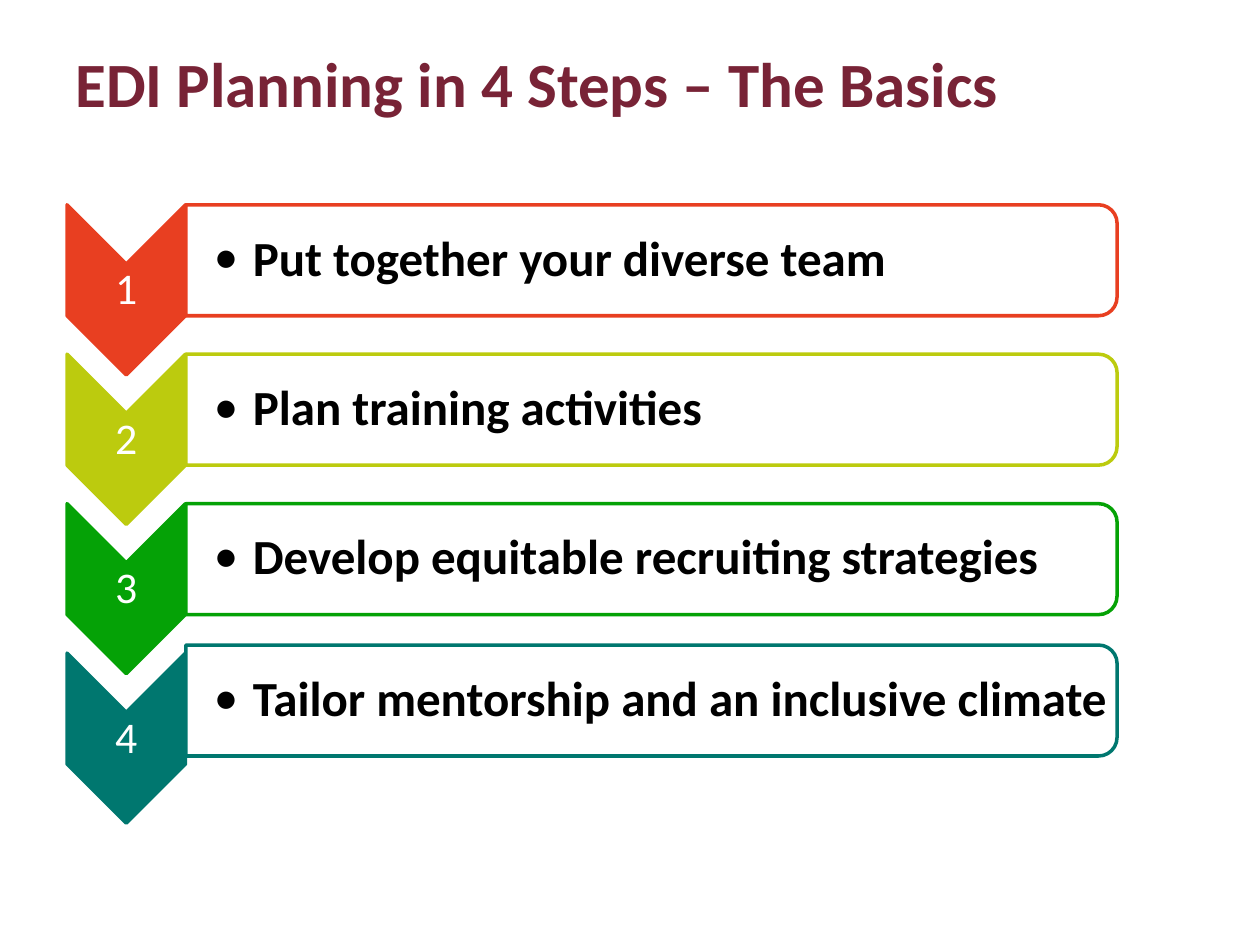
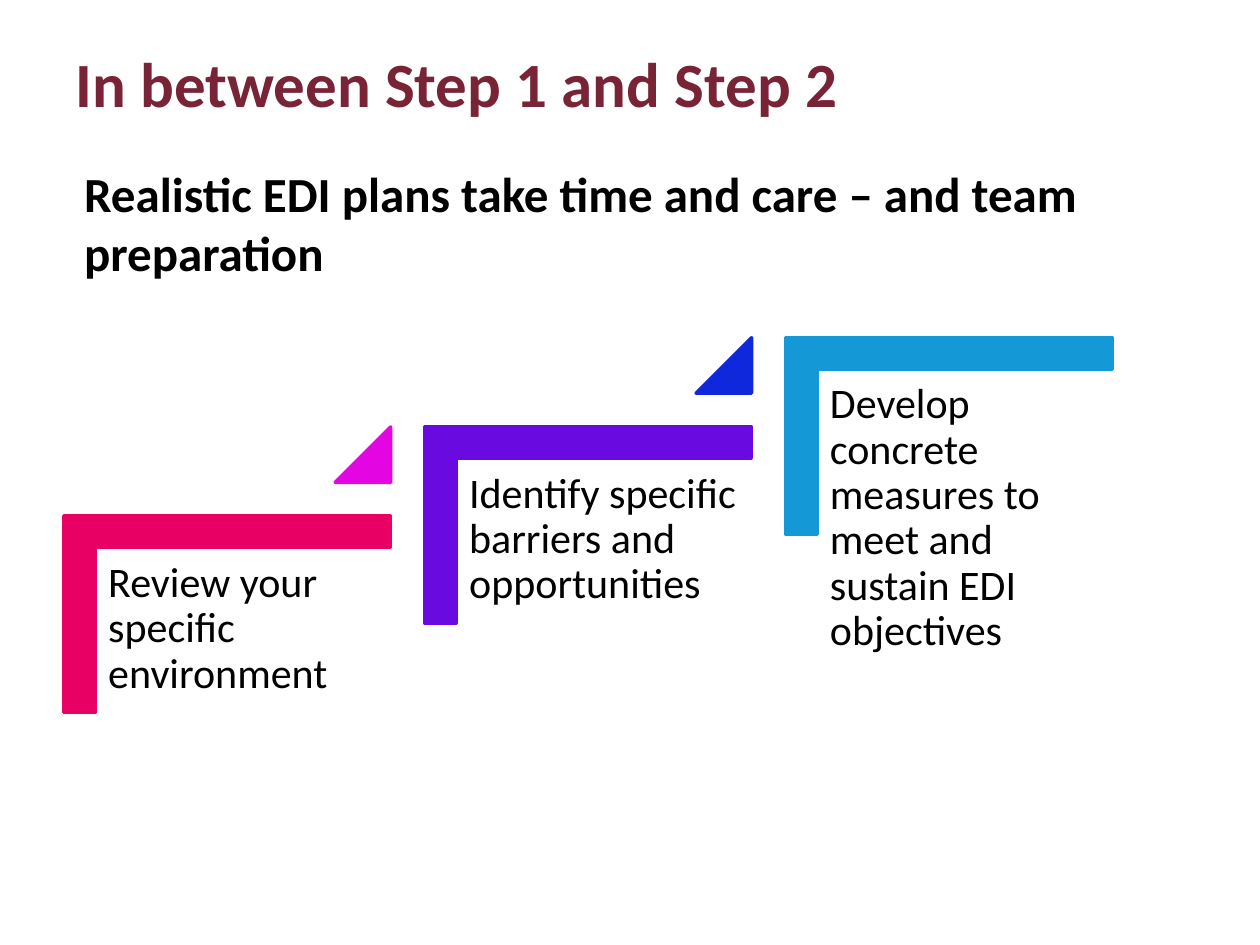
import pptx
import pptx.dml.color
import pptx.enum.shapes
import pptx.enum.text
import pptx.oxml
import pptx.oxml.ns
import pptx.util

Pt = pptx.util.Pt
SHAPES = pptx.enum.shapes.MSO_SHAPE
ALIGN = pptx.enum.text.PP_ALIGN
ANCHOR = pptx.enum.text.MSO_ANCHOR

FONT = "Calibri"
MAROON, BLACK, WHITE = "782336", "000000", "FFFFFF"
HEADING_INSETS = (7.2, 3.6, 7.2, 3.6)

STEPS = [
    ("Put together your diverse team", "E83F21", 0),
    ("Plan training activities", "BCCB0E", 0),
    ("Develop equitable recruiting strategies", "05A206", 0),
    ("Tailor mentorship and an inclusive climate", "00776F", -4.6),
]
STEP_PITCH = 85.4

STAIRS = [
    ("Review your specific environment", "E90065", "E405E3"),
    ("Identify specific barriers and opportunities", "690AE0", "1028DB"),
    ("Develop concrete measures to meet and sustain EDI objectives", "1598D6", None),
]
STAIR_RUN, STAIR_RISE = 206.2, 51


def colour(value):
    return pptx.dml.color.RGBColor.from_string(value)


def format_frame(frame, insets, anchor=ANCHOR.TOP):
    frame.word_wrap = True
    frame.auto_size = pptx.enum.text.MSO_AUTO_SIZE.NONE
    frame.vertical_anchor = anchor
    frame.margin_left, frame.margin_top, frame.margin_right, frame.margin_bottom = (
        Pt(inset) for inset in insets)


def add_span(para, text, size, value, bold=False):
    span = para.add_run()
    span.text = text
    span.font.name = FONT
    span.font.size = Pt(size)
    span.font.bold = bold
    span.font.color.rgb = colour(value)


def set_indent(para, left, first=0, bullet=None):
    properties = para._p.get_or_add_pPr()
    properties.set("marL", str(Pt(left)))
    properties.set("indent", str(Pt(first)))
    if bullet:
        namespace = pptx.oxml.ns.nsdecls("a")
        for mark in (f'<a:buFont {namespace} typeface="{FONT}"/>',
                     f'<a:buChar {namespace} char="{bullet}"/>'):
            properties.append(pptx.oxml.parse_xml(mark))


def add_text(page, place, text, size, value=BLACK, bold=False, insets=(1.5,) * 4,
             align=ALIGN.LEFT, anchor=ANCHOR.TOP, spacing=0.9):
    box = page.shapes.add_textbox(*map(Pt, place))
    format_frame(box.text_frame, insets, anchor)
    para = box.text_frame.paragraphs[0]
    para.alignment = align
    para.line_spacing = spacing
    add_span(para, text, size, value, bold)
    return para


def add_figure(page, kind, place, fill, line, adjustments=()):
    shape = page.shapes.add_shape(kind, *map(Pt, place))
    shape.shadow.inherit = False
    shape.fill.solid()
    shape.fill.fore_color.rgb = colour(fill)
    shape.line.color.rgb = colour(line)
    shape.line.width = Pt(2)
    for index, adjustment in enumerate(adjustments):
        shape.adjustments[index] = adjustment
    return shape


def add_turned_figure(page, kind, place, fill, line, adjustments=()):
    left, top, width, height = place
    shift = (width - height) / 2
    unturned = (left + shift, top - shift, height, width)
    shape = add_figure(page, kind, unturned, fill, line, adjustments)
    shape.rotation = 90


def add_titled_page(deck, text):
    page = deck.slides.add_slide(deck.slide_layouts[5])
    title = page.shapes.title
    title.left, title.top, title.width, title.height = map(Pt, (36, 21.6, 600, 68.4))
    format_frame(title.text_frame, HEADING_INSETS)
    para = title.text_frame.paragraphs[0]
    para.alignment = ALIGN.LEFT
    add_span(para, text, 36, MAROON, True)
    return page


def add_step(page, index, text, value, nudge):
    drop = index * STEP_PITCH
    add_turned_figure(page, SHAPES.CHEVRON, (38.3, 117 + drop, 67.7, 97.2), value, value)
    add_text(page, (38.3, 151.2 + drop, 67.7, 28.8), str(index + 1), 25, WHITE,
             align=ALIGN.CENTER)
    bar_drop = drop + nudge
    add_turned_figure(page, SHAPES.ROUND_2_SAME_RECTANGLE,
                      (106.2, 117 + bar_drop, 532.1, 63.4), WHITE, value)
    para = add_text(page, (106.2, 120.2 + bar_drop, 530, 56.9), text, 28, bold=True,
                    insets=(16, 1.5, 1.5, 1.5), anchor=ANCHOR.MIDDLE)
    set_indent(para, 22.3, -22.3, "•")
    para.font.size = Pt(28)


def add_stair(page, index, text, value, triangle_value):
    left = 36.4 + index * STAIR_RUN
    top = 294.8 - index * STAIR_RISE
    add_turned_figure(page, SHAPES.CORNER, (left, top, 186.5, 112.3), value, value,
                      (0.16, 0.16))
    add_text(page, (left + 18.4, top + 18.6, 168.5, 147.6), text, 24, insets=(7.2,) * 4)
    if triangle_value:
        add_figure(page, SHAPES.ISOSCELES_TRIANGLE, (left + 155.2, top - 50.8, 31.7, 31.7),
                   triangle_value, triangle_value, (1,))


def main():
    deck = pptx.Presentation()
    deck.slide_width, deck.slide_height = Pt(720), Pt(540)

    page = add_titled_page(deck, "EDI Planning in 4 Steps – The Basics")
    for index, step in enumerate(STEPS):
        add_step(page, index, *step)

    page = add_titled_page(deck, "In between Step 1 and Step 2")
    for index, stair in enumerate(STAIRS):
        add_stair(page, index, *stair)
    para = add_text(page, (36, 90, 613.4, 77.8),
                    "Realistic EDI plans take time and care – and team preparation", 28,
                    bold=True, insets=HEADING_INSETS, spacing=1.0)
    set_indent(para, 5)

    deck.save("out.pptx")


if __name__ == "__main__":
    main()
